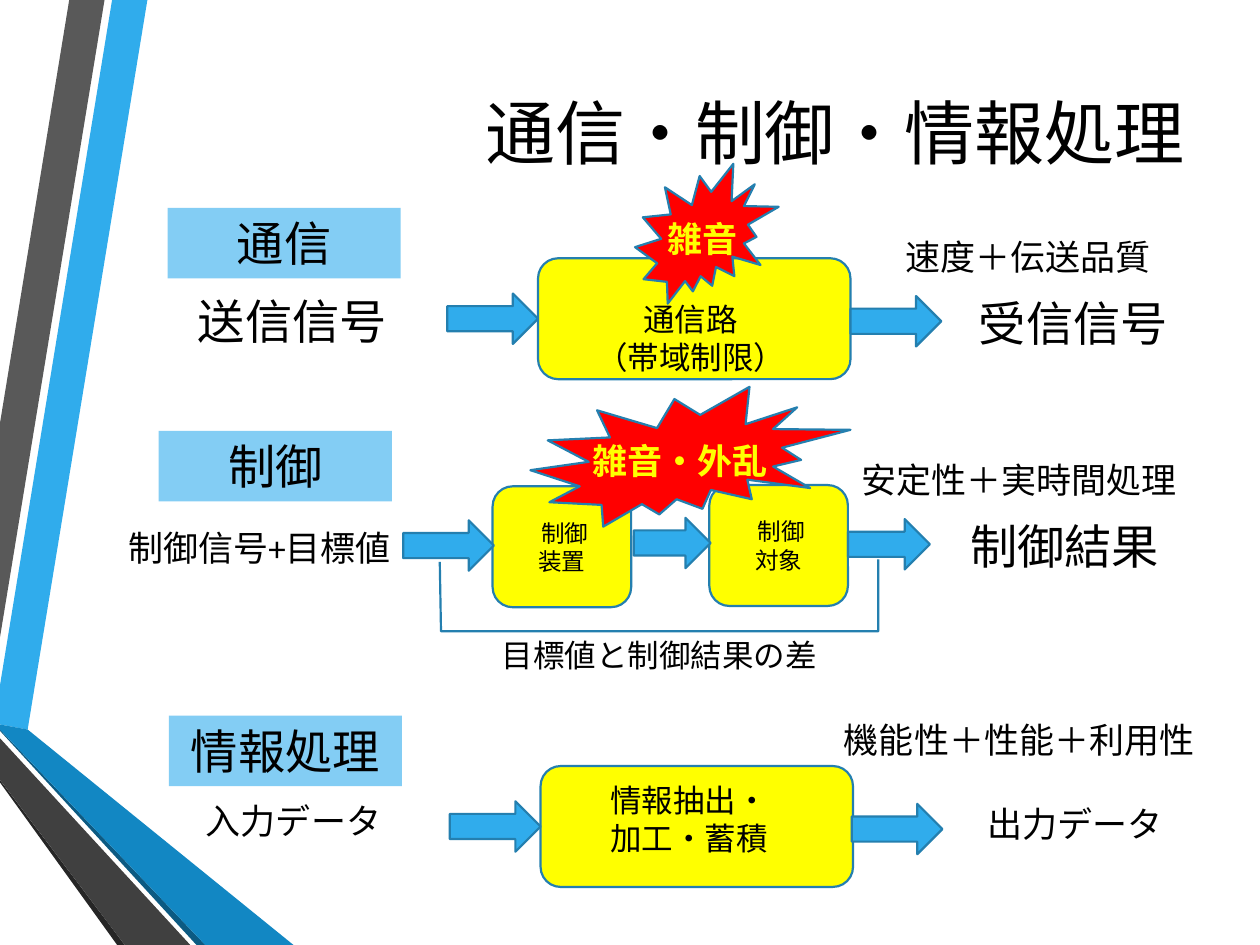
from pptx import Presentation
from pptx.dml.color import RGBColor
from pptx.enum.shapes import MSO_SHAPE
from pptx.enum.text import MSO_ANCHOR, PP_ALIGN
from pptx.util import Pt

PX = 9144
COLORS = {
    "black": "000000", "yellow": "FFFF00", "red": "FF0000",
    "blue": "30ACEC", "pale": "83CDF4", "outline": "247FAF",
    "ocean": "1287C3", "deep": "0C5A82",
    "grey": "595959", "charcoal": "404040", "soot": "262626",
}
SANS, SERIF = "Calibri", "Times New Roman"


class Board:
    def __init__(self, prs):
        self.s = prs.slides.add_slide(prs.slide_layouts[6])

    def color(self, name):
        return RGBColor.from_string(COLORS[name])

    def paint(self, sp, fill=None, line=None):
        sp.shadow.inherit = False
        if fill:
            sp.fill.solid()
            sp.fill.fore_color.rgb = self.color(fill)
        else:
            sp.fill.background()
        if line:
            sp.line.color.rgb = self.color(line)
            sp.line.width = Pt(1.25)
        else:
            sp.line.fill.background()
        return sp

    def label(self, sp, text, size, font=SANS, color="black", bold=False,
              align=PP_ALIGN.CENTER, anchor=MSO_ANCHOR.TOP):
        tf = sp.text_frame
        tf.text = text
        tf.word_wrap = True
        tf.vertical_anchor = anchor
        for p in tf.paragraphs:
            p.alignment = align
            for r in p.runs:
                r.font.name = font
                r.font.size = Pt(size)
                r.font.bold = bold
                r.font.color.rgb = self.color(color)
        return tf

    def shape(self, kind, box, fill, line="outline"):
        sp = self.s.shapes.add_shape(kind, *(v * PX for v in box))
        return self.paint(sp, fill, line)

    def text(self, box, text, size, **style):
        sp = self.s.shapes.add_textbox(*(v * PX for v in box))
        self.label(sp, text, size, **style)

    def outline(self, points, fill=None, line=None):
        builder = self.s.shapes.build_freeform(*points[0], scale=PX)
        builder.add_line_segments(points[1:], close=fill is not None)
        self.paint(builder.convert_to_shape(), fill, line)

    def heading(self, x, y, text):
        sp = self.shape(MSO_SHAPE.RECTANGLE, (x, y, 185, 56), "pale", None)
        self.label(sp, text, 27)

    def arrow(self, x, y, w=72):
        self.shape(MSO_SHAPE.RIGHT_ARROW, (x, y, w, 40), "blue")

    def block(self, x, y, w=248):
        return self.shape(MSO_SHAPE.ROUNDED_RECTANGLE, (x, y, w, 96), "yellow")

    def unit(self, x, y, text):
        tf = self.label(self.block(x, y, 110), text, 13.5, anchor=MSO_ANCHOR.MIDDLE)
        tf.margin_left = tf.margin_right = 7 * PX
        tf.margin_top = tf.margin_bottom = 4 * PX

    def burst(self, box, label_box, text):
        self.shape(MSO_SHAPE.EXPLOSION2, box, "red")
        self.text(label_box, text, 20, font=SERIF, color="yellow", bold=True)

    def quality(self, x, y, w, text):
        self.text((x, y, w, 44), text, 20, font=SERIF)


def draw_ribbons(b):
    ribbons = [
        ("blue", [(0, 544), (0, 575), (22, 579), (117, 0), (89, 0)]),
        ("grey", [(83, 0), (55, 0), (0, 336), (0, 506)]),
        ("soot", [(0, 619), (0, 621), (93, 750), (99, 750)]),
        ("deep", [(0, 579), (0, 580), (156, 750), (163, 750)]),
        ("ocean", [(0, 579), (163, 750), (233, 750), (22, 579), (0, 575)]),
        ("charcoal", [(0, 619), (99, 750), (151, 750), (0, 586)]),
    ]
    for fill, points in ribbons:
        b.outline(points, fill=fill)


def draw_communication(b):
    b.block(427, 205)
    b.text((424, 233, 248, 71), "通信路\n（帯域制限）", 18)
    b.heading(133, 165, "通信")
    b.text((108, 227, 248, 56), "送信信号", 27)
    b.arrow(355, 233)
    b.arrow(675, 235)
    b.text((747, 229, 210, 56), "受信信号", 27)
    b.quality(675, 182, 282, "速度＋伝送品質")
    b.burst((504, 130, 114, 111), (514, 168, 87, 44), "雑音")


def draw_control(b):
    b.unit(563, 385, " 制御\n対象")
    b.unit(391, 386, " 制御\n装置")
    b.heading(126, 342, "制御")
    b.text((82, 413, 248, 44), "制御信号+目標値", 20)
    b.arrow(320, 413)
    b.arrow(673, 412, 65)
    b.text((740, 406, 210, 56), "制御結果", 27)
    b.quality(668, 359, 282, "安定性＋実時間処理")
    b.burst((421, 307, 254, 111), (448, 344, 184, 44), "雑音・外乱")
    b.arrow(503, 411, 61)
    b.outline([(697, 444), (697, 501), (350, 501), (349, 446)], line="outline")
    b.text((349, 500, 348, 40), "目標値と制御結果の差", 18)


def draw_processing(b):
    b.block(429, 608)
    b.text((423, 615, 248, 71), "情報抽出・\n加工・蓄積", 18)
    b.heading(134, 568, "情報処理")
    b.text((109, 630, 248, 44), "入力データ", 20)
    b.arrow(357, 636)
    b.arrow(676, 638)
    b.text((748, 632, 210, 44), "出力データ", 20)
    b.quality(654, 565, 310, "機能性＋性能＋利用性")


def main():
    prs = Presentation()
    prs.slide_width, prs.slide_height = 1000 * PX, 750 * PX
    b = Board(prs)
    draw_ribbons(b)
    b.text((107, 50, 843, 109), "通信・制御・情報処理", 40,
           align=PP_ALIGN.RIGHT, anchor=MSO_ANCHOR.MIDDLE)
    draw_communication(b)
    draw_control(b)
    draw_processing(b)
    prs.save("out.pptx")


if __name__ == "__main__":
    main()
